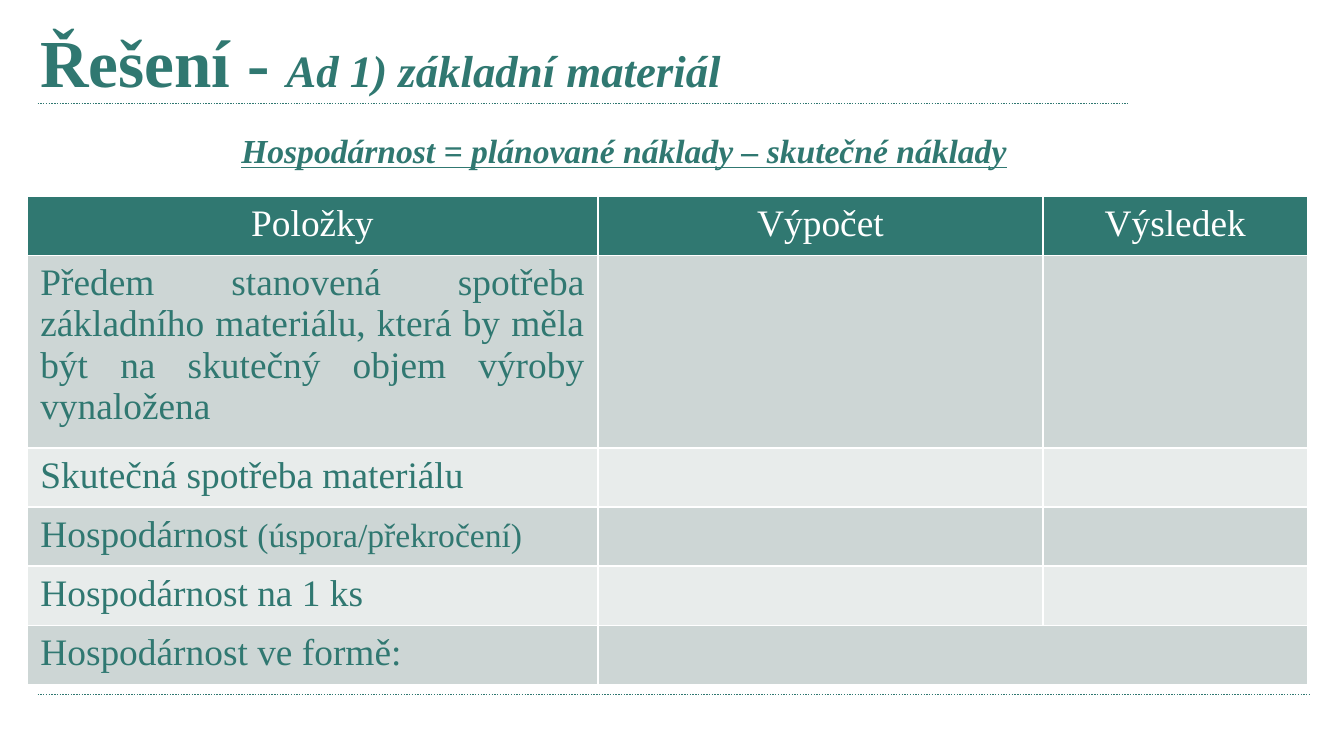
"""Build the slide on the economy of basic material consumption."""
from lxml.etree import SubElement
from pptx import Presentation
from pptx.dml.color import RGBColor
from pptx.enum.dml import MSO_LINE_DASH_STYLE as Dash
from pptx.enum.shapes import MSO_CONNECTOR_TYPE as Connector
from pptx.enum.text import MSO_VERTICAL_ANCHOR as Anchor, PP_PARAGRAPH_ALIGNMENT as Align
from pptx.oxml.ns import qn
from pptx.util import Inches, Pt

SLIDE_WIDTH = 10
SLIDE_SIZE = (SLIDE_WIDTH, SLIDE_WIDTH * 9 / 16)
FONT = "Times New Roman"
TEAL, WHITE = "307871", "FFFFFF"
BANDS = ("CDD6D5", "E8ECEB")

TITLE = [
    ("Řešení - ", {"size": Pt(36), "bold": True}),
    ("Ad 1) základní materiál", {"size": Pt(24), "bold": True, "italic": True}),
]
FORMULA = [
    ("Hospodárnost = plánované náklady – skutečné náklady",
     {"size": Pt(18), "bold": True, "italic": True, "underline": True}),
]
BODY = {"size": Pt(20)}
HEADERS = ["Položky", "Výpočet", "Výsledek"]
ITEMS = [
    [("Předem stanovená spotřeba základního materiálu, která by měla "
      "být na skutečný objem výroby vynaložena", BODY)],
    [("Skutečná spotřeba materiálu", BODY)],
    [("Hospodárnost ", BODY), ("(úspora/překročení)", {"size": Pt(18)})],
    [("Hospodárnost na 1 ks", BODY)],
    [("Hospodárnost ve formě:", BODY)],
]
TEXT_BOXES = [
    (TITLE, (0.2, 0.1, 8.82, 0.79), Align.LEFT),
    (FORMULA, (0.43, 0.92, 8.43, 0.4), Align.CENTER),
]
RULES = [(0.28, 8.39, 0.77), (0.28, 9.75, 5.17)]
TABLE_ORIGIN = (0.2, 1.46)
COLUMN_WIDTHS = [4.25, 3.31, 1.97]
ROW_HEIGHT, TALL_ROW_HEIGHT = 0.44, 1.42


def color(value):
    return RGBColor.from_string(value)


def write(text_frame, runs, align, ink=TEAL):
    paragraph = text_frame.paragraphs[0]
    paragraph.alignment = align
    for text, formats in runs:
        run = paragraph.add_run()
        run.text = text
        run.font.color.rgb = color(ink)
        for name, value in {"name": FONT, **formats}.items():
            setattr(run.font, name, value)


def add_text(slide, runs, box, align):
    text_frame = slide.shapes.add_textbox(*map(Inches, box)).text_frame
    text_frame.word_wrap = True
    text_frame.vertical_anchor = Anchor.TOP
    write(text_frame, runs, align)


def add_rule(slide, left, right, top):
    rule = slide.shapes.add_connector(
        Connector.STRAIGHT, *map(Inches, (left, top, right, top)))
    rule.line.color.rgb = color(TEAL)
    rule.line.width = Pt(0.75)
    rule.line.dash_style = Dash.ROUND_DOT
    SubElement(rule.element.spPr, qn("a:effectLst"))


def style_cell(cell, fill):
    properties = cell._tc.get_or_add_tcPr()
    for side in "LRTB":
        border = SubElement(properties, qn(f"a:ln{side}"), w=str(Pt(1)))
        solid = SubElement(border, qn("a:solidFill"))
        SubElement(solid, qn("a:srgbClr"), val=WHITE)
    cell.fill.solid()
    cell.fill.fore_color.rgb = color(fill)


def add_items_table(slide):
    heights = [ROW_HEIGHT, TALL_ROW_HEIGHT] + [ROW_HEIGHT] * (len(ITEMS) - 1)
    size = (sum(COLUMN_WIDTHS), sum(heights))
    table = slide.shapes.add_table(
        len(heights), len(COLUMN_WIDTHS), *map(Inches, TABLE_ORIGIN + size)).table
    for column, width in zip(table.columns, COLUMN_WIDTHS):
        column.width = Inches(width)
    for index, (row, height) in enumerate(zip(table.rows, heights)):
        row.height = Inches(height)
        fill = BANDS[(index - 1) % 2] if index else TEAL
        for cell in row.cells:
            style_cell(cell, fill)
    for index, header in enumerate(HEADERS):
        write(table.cell(0, index).text_frame, [(header, BODY)], Align.CENTER, WHITE)
    for index, runs in enumerate(ITEMS, 1):
        align = Align.JUSTIFY if index == 1 else Align.LEFT
        write(table.cell(index, 0).text_frame, runs, align)
    last = len(ITEMS)
    table.cell(last, 1).merge(table.cell(last, 2))


def main():
    presentation = Presentation()
    presentation.slide_width, presentation.slide_height = map(Inches, SLIDE_SIZE)
    slide = presentation.slides.add_slide(presentation.slide_layouts[6])
    for rule in RULES:
        add_rule(slide, *rule)
    for text_box in TEXT_BOXES:
        add_text(slide, *text_box)
    add_items_table(slide)
    presentation.save("out.pptx")


if __name__ == "__main__":
    main()
